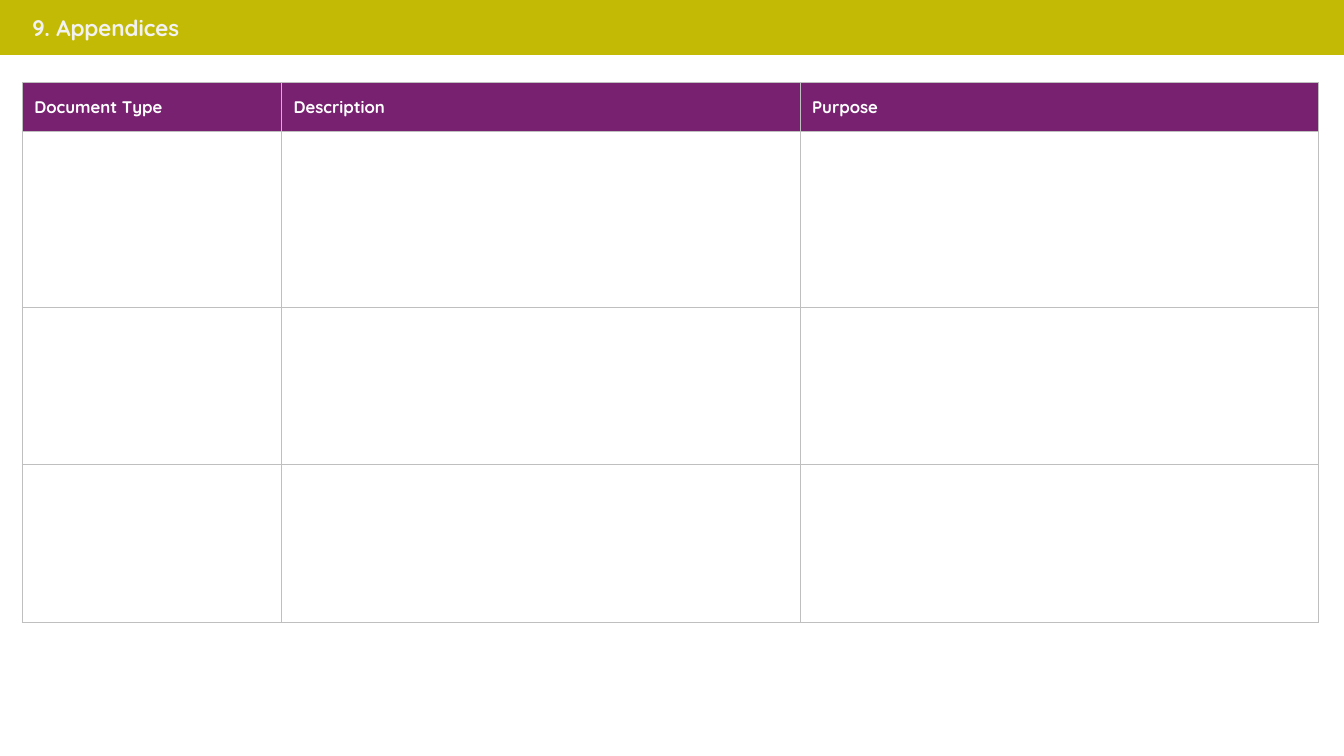
from lxml.etree import SubElement
from pptx import Presentation
from pptx.dml.color import RGBColor
from pptx.enum.shapes import MSO_SHAPE as Shape
from pptx.enum.text import MSO_ANCHOR as Anchor, PP_ALIGN as Align
from pptx.oxml.ns import qn
from pptx.util import Inches, Pt

FONT = "Quicksand"
COLORS = {"band": "C3BA05", "title": "F2F2F2", "header": "782170",
          "white": "FFFFFF", "grid": "BFBFBF"}
HEADERS = ["Document Type", "Description", "Purpose"]
COL_SHARES = [1, 2, 2]
ROW_HEIGHTS = [0.48, 1.75, 1.56, 1.56]


def rgb(name):
    """Return the named colour."""
    return RGBColor.from_string(COLORS[name])


def style_text(tf, size, color):
    """Format every run of a text frame in the bold slide font."""
    for p in tf.paragraphs:
        p.alignment = Align.LEFT
        for r in p.runs:
            r.font.name = FONT
            r.font.size = Pt(size)
            r.font.bold = True
            r.font.color.rgb = rgb(color)


def add_title_band(slide, text, x, y, w, h):
    """Draw the coloured band with the slide title on it."""
    band = slide.shapes.add_shape(Shape.RECTANGLE, Inches(x), Inches(y), Inches(w), Inches(h))
    band.shadow.inherit = False
    band.fill.solid()
    band.fill.fore_color.rgb = rgb("band")
    band.line.color.rgb = rgb("band")
    band.line.width = Pt(1.5)
    slide.shapes._spTree.insert(2, band._element)

    title = slide.shapes.title
    title.left, title.top = Inches(x + 0.22), Inches(y + 0.09)
    title.width, title.height = Inches(8.08), Inches(0.37)
    tf = title.text_frame
    tf.text = text
    tf.word_wrap = True
    tf.vertical_anchor = Anchor.MIDDLE
    style_text(tf, 16, "title")


def set_borders(cell):
    """Give a cell thin grey lines on all four sides."""
    props = cell._tc.get_or_add_tcPr()
    for side in ("a:lnL", "a:lnR", "a:lnT", "a:lnB"):
        line = SubElement(props, qn(side), w=str(Pt(0.5)))
        fill = SubElement(line, qn("a:solidFill"))
        SubElement(fill, qn("a:srgbClr"), val=COLORS["grid"])


def add_appendix_table(slide, x, y, w):
    """Add the table with a header row and blank rows to fill in."""
    frame = slide.shapes.add_table(len(ROW_HEIGHTS), len(HEADERS), Inches(x), Inches(y),
                                   Inches(w), Inches(sum(ROW_HEIGHTS)))
    table = frame.table
    table.first_row = table.horz_banding = False
    for col, share in zip(table.columns, COL_SHARES):
        col.width = Inches(w * share / sum(COL_SHARES))
    for row, height in zip(table.rows, ROW_HEIGHTS):
        row.height = Inches(height)
    for cell in table.iter_cells():
        set_borders(cell)
        cell.fill.background()
    for cell, text in zip(table.rows[0].cells, HEADERS):
        cell.fill.solid()
        cell.fill.fore_color.rgb = rgb("header")
        cell.vertical_anchor = Anchor.MIDDLE
        cell.margin_left = Inches(0.12)
        cell.margin_top = cell.margin_right = Inches(0.01)
        cell.margin_bottom = 0
        cell.text_frame.text = text
        style_text(cell.text_frame, 12, "white")


def main():
    """Build and save the appendices slide."""
    prs = Presentation()
    prs.slide_width, prs.slide_height = Inches(13.33), Inches(7.5)
    slide = prs.slides.add_slide(prs.slide_layouts[5])
    add_title_band(slide, "9. Appendices", 0, 0, 13.33, 0.54)
    add_appendix_table(slide, 0.22, 0.82, 12.86)
    prs.save("out.pptx")


if __name__ == "__main__":
    main()
